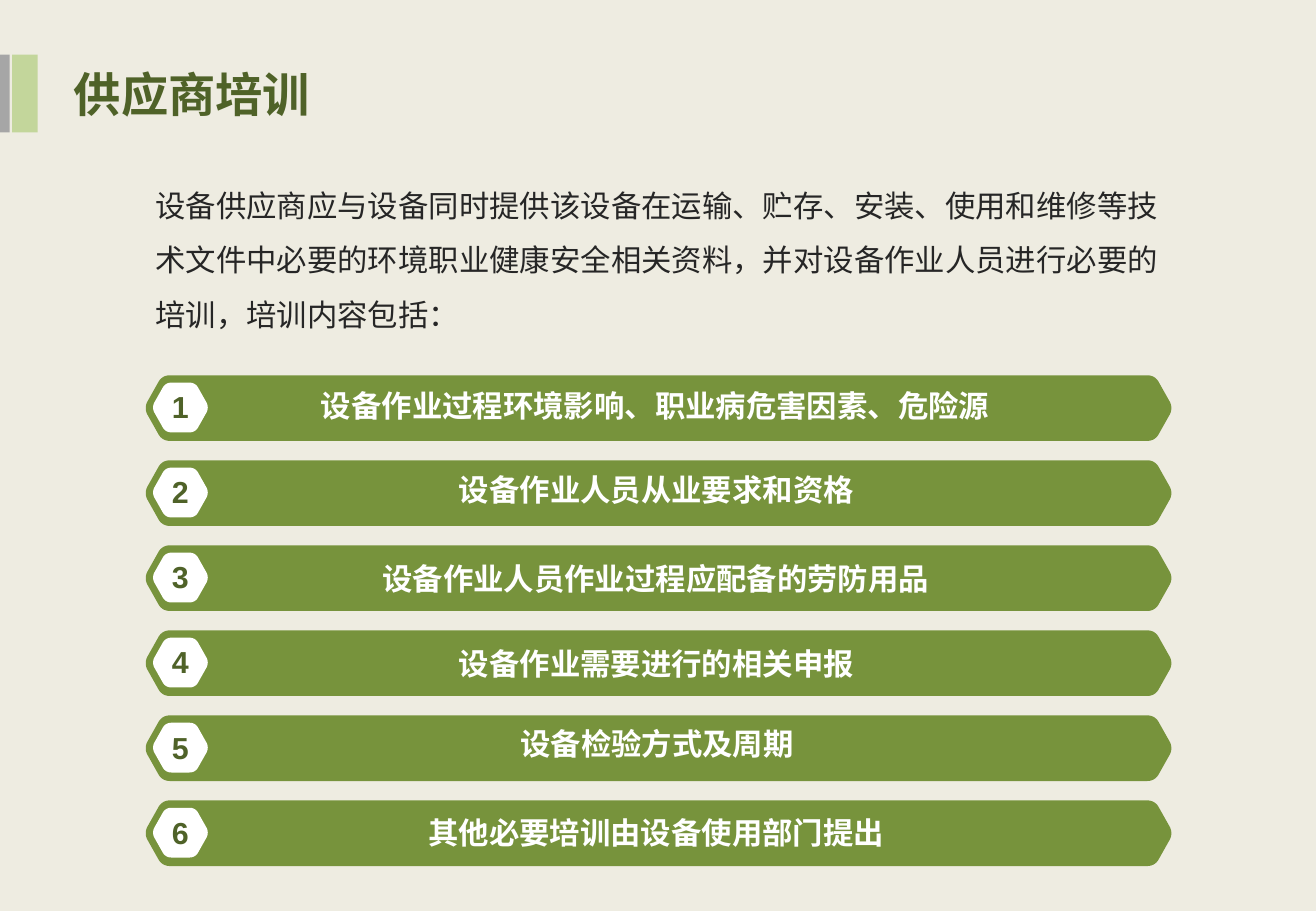
import lxml.etree
import pptx
import pptx.dml.color
import pptx.enum.shapes
import pptx.enum.text
import pptx.oxml.ns
import pptx.util

Inches = pptx.util.Inches
RGBColor = pptx.dml.color.RGBColor
ALIGN = pptx.enum.text.PP_ALIGN

CREAM = RGBColor(0xEE, 0xEC, 0xE1)
GREEN = RGBColor(0x77, 0x93, 0x3C)
DARK = RGBColor(0x4F, 0x62, 0x28)
LIGHT = RGBColor(0xC3, 0xD6, 0x9B)
GREY = RGBColor(0xA6, 0xA6, 0xA6)
INK = RGBColor(0x26, 0x26, 0x26)
WHITE = RGBColor(0xFF, 0xFF, 0xFF)
HAN = "Noto Sans CJK SC"

TITLE = "供应商培训"
INTRO = ("设备供应商应与设备同时提供该设备在运输、贮存、安装、使用和维修等技术文件中"
         "必要的环境职业健康安全相关资料，并对设备作业人员进行必要的培训，培训内容包括：")
# Each topic with the top of its label
TOPICS = [
    ("设备作业过程环境影响、职业病危害因素、危险源", 3.14),
    ("设备作业人员从业要求和资格", 3.83),
    ("设备作业人员作业过程应配备的劳防用品", 4.56),
    ("设备作业需要进行的相关申报", 5.26),
    ("设备检验方式及周期", 5.92),
    ("其他必要培训由设备使用部门提出", 6.65),
]
PITCH = 0.7
MIDDLE = 5.42


def add_text(slide, text, left, top, width, height, size=18, color=WHITE,
             font=HAN, bold=True, align=ALIGN.LEFT, wrap=True, spacing=None):
    box = slide.shapes.add_textbox(
        Inches(left), Inches(top), Inches(width), Inches(height))
    box.text_frame.word_wrap = wrap
    para = box.text_frame.paragraphs[0]
    para.alignment = align
    para.line_spacing = spacing
    run = para.add_run()
    run.text = text
    run.font.size = pptx.util.Pt(size)
    run.font.bold = bold
    run.font.name = font
    run.font.color.rgb = color
    east = lxml.etree.SubElement(
        run._r.get_or_add_rPr(), pptx.oxml.ns.qn("a:ea"))
    east.set("typeface", font)


def paint(shape, color):
    shape.shadow.inherit = False
    shape.fill.solid()
    shape.fill.fore_color.rgb = color
    shape.line.fill.background()


def add_block(slide, left, top, width, height, color):
    kind = pptx.enum.shapes.MSO_SHAPE.RECTANGLE
    paint(slide.shapes.add_shape(
        kind, Inches(left), Inches(top), Inches(width), Inches(height)), color)


def curve(start, bend, end, steps=8):
    """Points along a quadratic curve from start to end."""
    points = []
    for step in range(steps + 1):
        t = step / steps
        points.append(tuple(
            (1 - t) ** 2 * a + 2 * t * (1 - t) * b + t ** 2 * c
            for a, b, c in zip(start, bend, end)))
    return points


def add_hex(slide, left, top, width, height, color):
    """Hexagon with round corners, whose ends scale with its height."""
    side = (curve((0.37, 0), (0.26, 0), (0.2, 0.09))
            + curve((0.02, 0.41), (-0.02, 0.5), (0.02, 0.59))
            + curve((0.2, 0.91), (0.26, 1), (0.37, 1)))
    ratio = width / height
    outline = side + [(ratio - x, y) for x, y in reversed(side)]
    points = [(Inches(left + x * height), Inches(top + y * height))
              for x, y in outline]
    pen = slide.shapes.build_freeform(*points[0])
    pen.add_line_segments(points[1:], close=True)
    paint(pen.convert_to_shape(), color)


def add_topic(slide, index, text, top):
    shift = index * PITCH
    add_hex(slide, 1.2, 3.09 + shift, 8.44, 0.54, GREEN)
    add_hex(slide, 1.26, 3.15 + shift, 0.45, 0.41, WHITE)
    width = 0.2 + 0.2525 * len(text)
    add_text(slide, text, MIDDLE - width / 2, top, width, 0.4, wrap=False)
    add_text(slide, str(index + 1), 1.28, 3.15 + shift, 0.41, 0.4,
             color=DARK, font="Arial", align=ALIGN.CENTER)


def main():
    deck = pptx.Presentation()
    deck.slide_width = Inches(10.83)
    deck.slide_height = Inches(7.5)
    slide = deck.slides.add_slide(deck.slide_layouts[6])
    slide.background.fill.solid()
    slide.background.fill.fore_color.rgb = CREAM

    add_text(slide, TITLE, 0.51, 0.49, 7.56, 0.57, size=28, color=DARK)
    add_block(slide, 0.1, 0.45, 0.21, 0.64, LIGHT)
    add_block(slide, 0, 0.45, 0.08, 0.64, GREY)
    add_text(slide, INTRO, 1.18, 1.34, 8.51, 1.46,
             color=INK, bold=False, spacing=1.5)
    for index, (text, top) in enumerate(TOPICS):
        add_topic(slide, index, text, top)
    deck.save("out.pptx")


if __name__ == "__main__":
    main()
